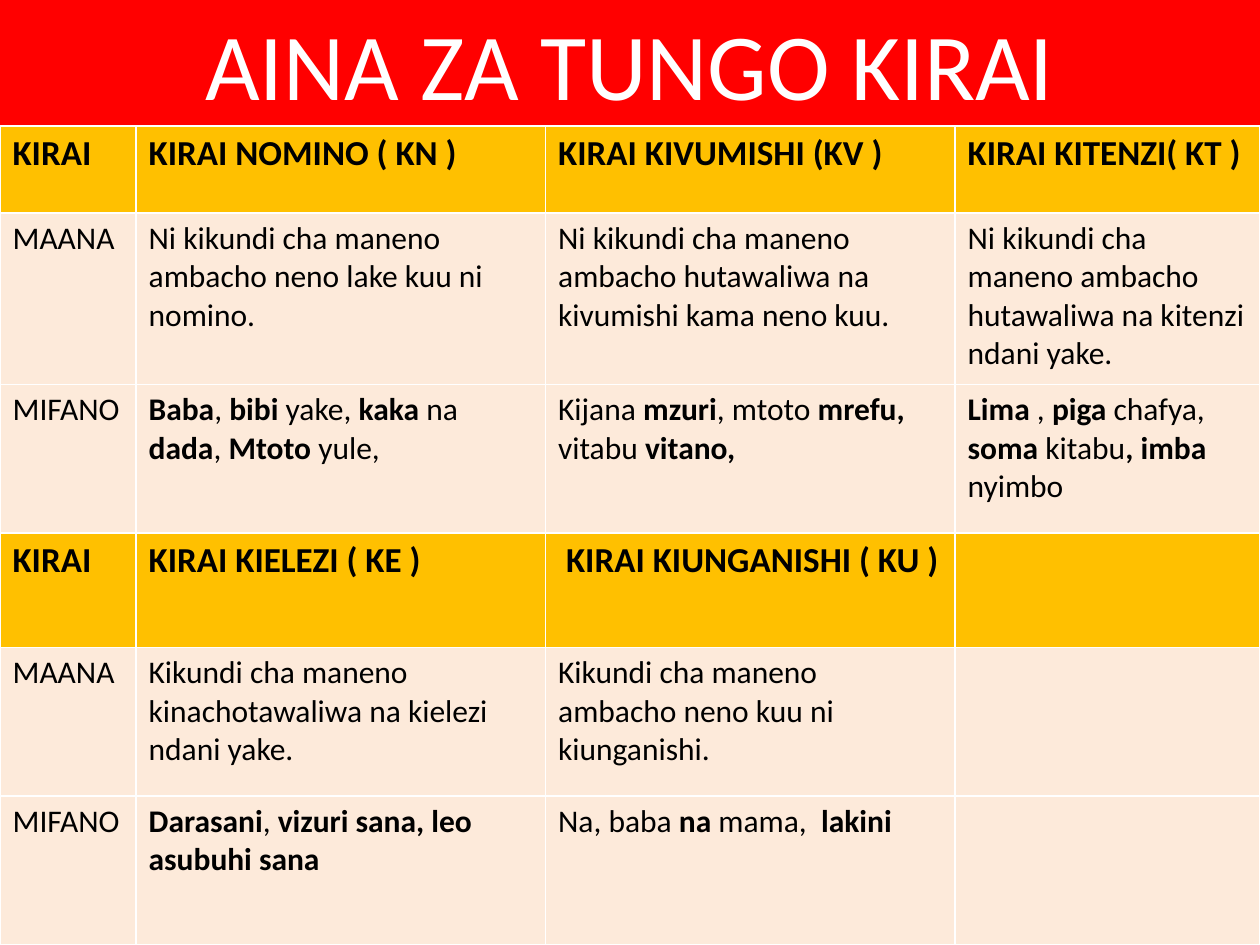
from dataclasses import dataclass

from pptx import Presentation
from pptx import util as u
from pptx.dml.color import RGBColor
from pptx.enum import text

PX = 9144


@dataclass(frozen=True)
class Theme:
    font: str = "Calibri"
    red: str = "FF0000"
    gold: str = "FFC000"
    peach: str = "FDEADA"
    ink: str = "000000"
    white: str = "FFFFFF"
    title: int = 54
    head: int = 20
    body: int = 18


class Deck:
    def __init__(self, theme):
        self.theme = theme
        self.prs = Presentation()
        self.prs.slide_width = 1000 * PX
        self.prs.slide_height = 750 * PX
        self.slide = self.prs.slides.add_slide(self.prs.slide_layouts[5])

    def paint(self, item, color):
        item.fill.solid()
        item.fill.fore_color.rgb = RGBColor.from_string(color)

    def style(self, run, size, color, bold=False):
        run.font.name = self.theme.font
        run.font.size = u.Pt(size)
        run.font.bold = bold
        run.font.color.rgb = RGBColor.from_string(color)

    def title(self, words, x, y, w, h):
        box = self.slide.shapes.title
        box.left, box.top, box.width, box.height = (n * PX for n in (x, y, w, h))
        self.paint(box, self.theme.red)
        frame = box.text_frame
        frame.text = words
        frame.auto_size = text.MSO_AUTO_SIZE.NONE
        frame.vertical_anchor = text.MSO_ANCHOR.MIDDLE
        para = frame.paragraphs[0]
        para.alignment = text.PP_ALIGN.CENTER
        self.style(para.runs[0], self.theme.title, self.theme.white)

    def cell(self, cell, words, head):
        self.paint(cell, self.theme.gold if head else self.theme.peach)
        size = self.theme.head if head else self.theme.body
        para = cell.text_frame.paragraphs[0]
        for i, part in enumerate(words.split("*")):
            if part:
                run = para.add_run()
                run.text = part
                self.style(run, size, self.theme.ink, head or i % 2 == 1)

    def table(self, rows, x, y, widths, heights, heads):
        frame = self.slide.shapes.add_table(
            len(rows), len(widths), x * PX, y * PX,
            sum(widths) * PX, sum(heights) * PX)
        grid = frame.table
        grid.horz_banding = False
        for col, w in zip(grid.columns, widths):
            col.width = w * PX
        for r, (row, h) in enumerate(zip(rows, heights)):
            grid.rows[r].height = h * PX
            for c, words in enumerate(row):
                self.cell(grid.cell(r, c), words, r in heads)


ROWS = [
    ["KIRAI", "KIRAI NOMINO ( KN )", "KIRAI KIVUMISHI (KV )", "KIRAI KITENZI( KT )"],
    ["MAANA",
     "Ni kikundi cha maneno ambacho neno lake kuu ni nomino.",
     "Ni kikundi cha maneno ambacho hutawaliwa na kivumishi kama neno kuu.",
     "Ni kikundi cha maneno ambacho hutawaliwa na kitenzi ndani yake."],
    ["MIFANO",
     "*Baba*, *bibi* yake, *kaka *na *dada*, *Mtoto* yule,",
     "Kijana *mzuri*, mtoto *mrefu,* vitabu *vitano,*",
     "*Lima* , *piga* chafya, *soma* kitabu*, imba *nyimbo"],
    ["KIRAI", "KIRAI KIELEZI ( KE )", " KIRAI KIUNGANISHI ( KU )", ""],
    ["MAANA",
     "Kikundi cha maneno kinachotawaliwa na kielezi ndani yake.",
     "Kikundi cha maneno ambacho neno kuu ni kiunganishi.", ""],
    ["MIFANO",
     "*Darasani*, *vizuri sana, leo asubuhi sana*",
     "Na, baba *na* mama,  *lakini*", ""],
]


def main():
    deck = Deck(Theme())
    deck.title("AINA ZA TUNGO KIRAI", 0, 0, 1000, 100)
    deck.table(ROWS, 0, 100, [108, 325, 325, 242],
               [69, 136, 118, 91, 118, 118], heads=(0, 3))
    deck.prs.save("out.pptx")


if __name__ == "__main__":
    main()
